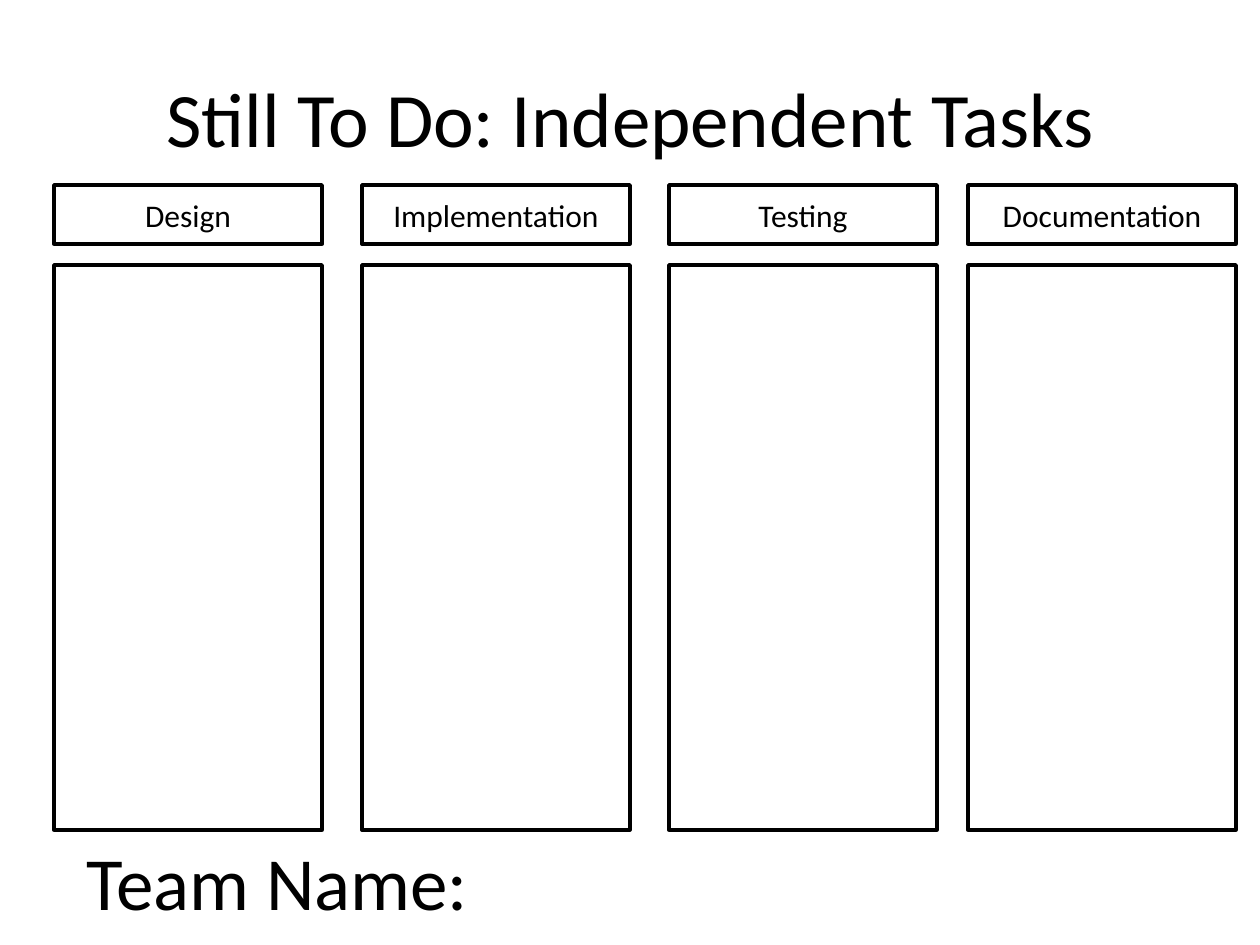
from dataclasses import dataclass

from pptx import Presentation
from pptx.dml.color import RGBColor
from pptx.enum.shapes import MSO_SHAPE
from pptx.enum.text import MSO_ANCHOR, PP_ALIGN
from pptx.shapes.autoshape import Shape
from pptx.slide import Slide
from pptx.util import Emu, Pt

RECTANGLE = MSO_SHAPE.RECTANGLE
MIDDLE = MSO_ANCHOR.MIDDLE
CENTER, LEFT = PP_ALIGN.CENTER, PP_ALIGN.LEFT

EMU_PER_PX = 914400 / 126
SLIDE_WIDTH, SLIDE_HEIGHT = 1260, 945
COLORS = {"ink": "000000"}
FONT = "Calibri"

COLUMN_WIDTH = 268
HEADER_TOP, HEADER_HEIGHT = 185, 59
TASKS_TOP, TASKS_HEIGHT = 265, 565


@dataclass(frozen=True)
class Box:
    left: int
    top: int
    width: int
    height: int

    def emu(self) -> list[Emu]:
        return [px(n) for n in (self.left, self.top, self.width, self.height)]


@dataclass(frozen=True)
class Column:
    heading: str
    left: int


COLUMNS = [
    Column("Design", 54),
    Column("Implementation", 362),
    Column("Testing", 669),
    Column("Documentation", 968),
]


def px(length: int) -> Emu:
    return Emu(round(length * EMU_PER_PX))


def ink() -> RGBColor:
    return RGBColor.from_string(COLORS["ink"])


def write(holder: Shape, wording: str, size: float, alignment: PP_ALIGN) -> None:
    frame = holder.text_frame
    frame.word_wrap = True
    frame.vertical_anchor = MIDDLE
    paragraph = frame.paragraphs[0]
    paragraph.alignment = alignment
    run = paragraph.add_run()
    run.text = wording
    for attribute, value in {"name": FONT, "size": Pt(size)}.items():
        setattr(run.font, attribute, value)
    run.font.color.rgb = ink()


def draw_label(slide: Slide, box: Box, wording: str, size: float, alignment: PP_ALIGN) -> None:
    write(slide.shapes.add_textbox(*box.emu()), wording, size, alignment)


def draw_frame(slide: Slide, box: Box) -> Shape:
    frame = slide.shapes.add_shape(RECTANGLE, *box.emu())
    frame.shadow.inherit = False
    frame.fill.background()
    frame.line.color.rgb = ink()
    frame.line.width = Pt(2)
    return frame


def draw_column(slide: Slide, column: Column) -> None:
    draw_frame(slide, Box(column.left, TASKS_TOP, COLUMN_WIDTH, TASKS_HEIGHT))
    header = draw_frame(slide, Box(column.left, HEADER_TOP, COLUMN_WIDTH, HEADER_HEIGHT))
    write(header, column.heading, 18, CENTER)


def main() -> None:
    """Build the task board slide with four columns and a team name line."""
    deck = Presentation()
    deck.slide_width, deck.slide_height = px(SLIDE_WIDTH), px(SLIDE_HEIGHT)
    slide = deck.slides.add_slide(deck.slide_layouts[6])
    draw_label(slide, Box(64, 38, 1134, 158), "Still To Do: Independent Tasks", 44, CENTER)
    for column in COLUMNS:
        draw_column(slide, column)
    draw_label(slide, Box(74, 801, 1134, 158), "Team Name:", 42.9, LEFT)
    deck.save("out.pptx")


if __name__ == "__main__":
    main()
